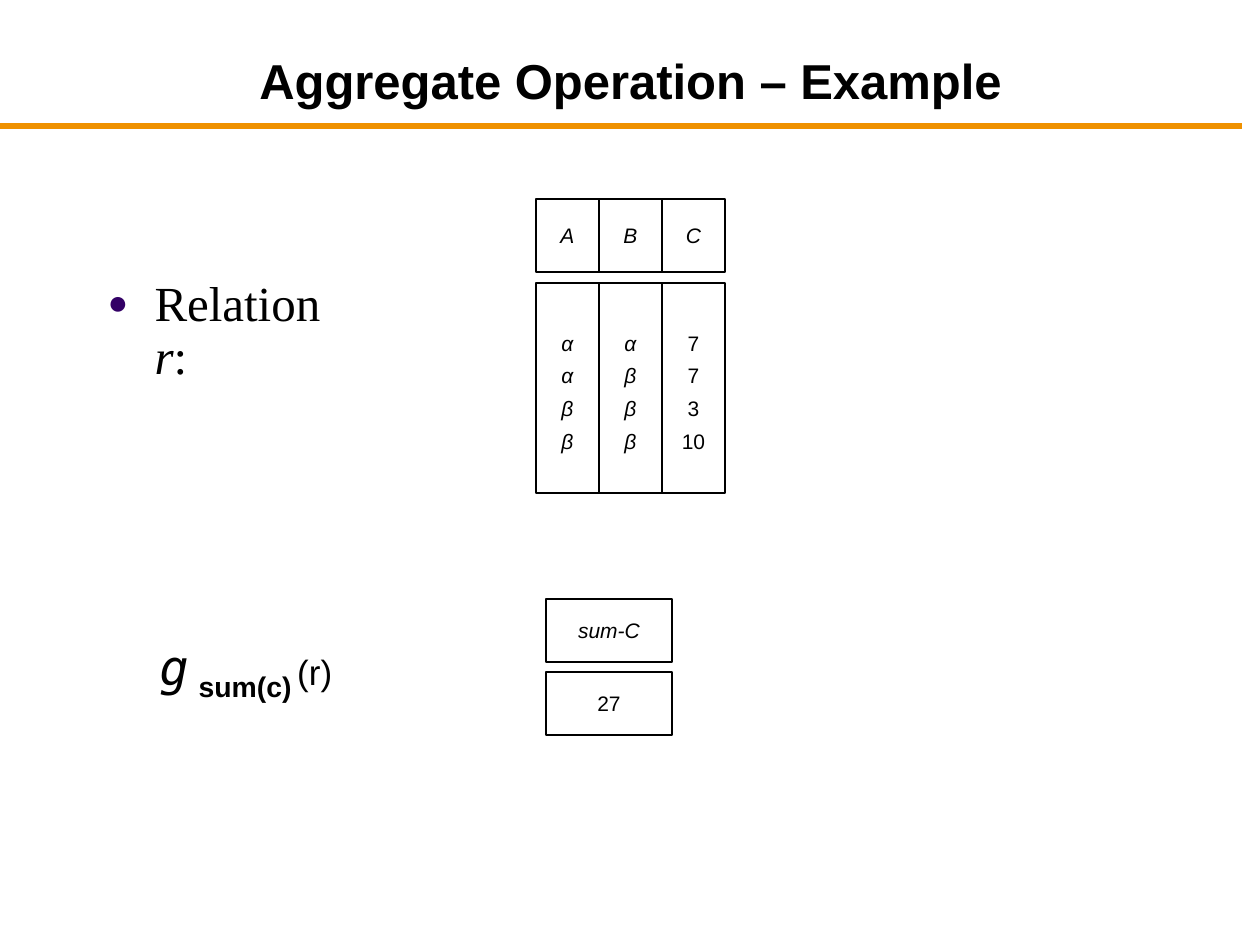
from lxml.etree import SubElement
from pptx import Presentation
from pptx.dml.color import RGBColor
from pptx.enum.shapes import MSO_CONNECTOR as Connector, MSO_SHAPE as Shape
from pptx.enum.text import MSO_ANCHOR as Anchor, MSO_AUTO_SIZE as AutoSize, PP_ALIGN as Align
from pptx.oxml.ns import qn
from pptx.util import Emu, Pt

TITLE = "Aggregate Operation – Example"
RELATION = [("Relation ", {}), ("r", {"italic": True}), (":", {})]
EXPRESSION = [
    ("g", {"size": 28, "font": "DejaVu Sans Mono", "italic": True}),
    (" ", {"size": 20, "bold": True}),
    ("sum(c)", {"size": 28, "bold": True, "baseline": -25000}),
    (" ", {"size": 20, "bold": True, "baseline": -25000}),
    ("(r)", {"size": 20}),
]
TABLES = [
    {"left": 536, "column": 63, "head": (199, 73), "body": (283, 210),
     "columns": [("A", ["α", "α", "β", "β"], True),
                 ("B", ["α", "β", "β", "β"], True),
                 ("C", ["7", "7", "3", "10"], False)]},
    {"left": 546, "column": 126, "head": (599, 63), "body": (672, 63),
     "columns": [("sum-C", ["27"], False)]},
]
BLACK, WHITE, ORANGE, PURPLE = "000000", "FFFFFF", "EF9100", "330066"


def px(n):
    return Emu(round(n * 914400 / 126))


def color(code):
    return RGBColor.from_string(code)


def place(part, left, top, width, height):
    part.left, part.top, part.width, part.height = map(px, (left, top, width, height))


def add_run(paragraph, text, size=12, font="Arial", bold=False, italic=False, baseline=None):
    run = paragraph.add_run()
    run.text = text
    run.font.size, run.font.name = Pt(size), font
    run.font.bold, run.font.italic = bold, italic
    run.font.color.rgb = color(BLACK)
    if baseline:
        run.font._element.set("baseline", str(baseline))


def hang(paragraph, indent):
    props = paragraph._p.get_or_add_pPr()
    props.set("marL", str(px(indent)))
    props.set("indent", str(-px(indent)))
    return props


def add_bullet(props):
    tint = SubElement(props, qn("a:buClr"))
    SubElement(tint, qn("a:srgbClr"), val=PURPLE)
    SubElement(props, qn("a:buSzPct"), val="70000")
    SubElement(props, qn("a:buFont"), typeface="Arial")
    SubElement(props, qn("a:buChar"), char="●")


def add_cell(slide, left, top, width, height, lines, italic, spacing):
    cell = slide.shapes.add_shape(Shape.RECTANGLE, *map(px, (left, top, width, height)))
    cell.shadow.inherit = False
    cell.fill.solid()
    cell.fill.fore_color.rgb = color(WHITE)
    cell.line.color.rgb = color(BLACK)
    cell.line.width = Pt(0.75)
    frame = cell.text_frame
    frame.word_wrap = False
    frame.vertical_anchor = Anchor.MIDDLE
    for i, line in enumerate(lines):
        paragraph = frame.add_paragraph() if i else frame.paragraphs[0]
        paragraph.alignment = Align.CENTER
        paragraph.line_spacing = spacing
        add_run(paragraph, line, italic=italic)


def main():
    deck = Presentation()
    deck.slide_width, deck.slide_height = px(1260), px(945)
    slide = deck.slides.add_slide(deck.slide_layouts[1])

    rule = slide.shapes.add_connector(Connector.STRAIGHT, 0, px(126), px(1242), px(126))
    rule.line.color.rgb = color(ORANGE)
    rule.line.width = Pt(3)
    SubElement(rule._element.spPr, qn("a:effectLst"))

    title = slide.shapes.title
    place(title, 95, 0, 1071, 116)
    title.text_frame.auto_size = AutoSize.NONE
    title.text_frame.vertical_anchor = Anchor.BOTTOM
    heading = title.text_frame.paragraphs[0]
    heading.alignment = Align.CENTER
    add_run(heading, TITLE, size=28, bold=True)

    relation = slide.placeholders[1]
    place(relation, 95, 273, 247, 67)
    relation.text_frame.auto_size = AutoSize.NONE
    item = relation.text_frame.paragraphs[0]
    item.line_spacing, item.space_before = 0.9, Pt(5.6)
    add_bullet(hang(item, 47))
    for text, style in RELATION:
        add_run(item, text, size=28, font="Times New Roman", **style)

    expression = slide.shapes.add_textbox(*map(px, (147, 630, 223, 77)))
    expression.text_frame.word_wrap = True
    formula = expression.text_frame.paragraphs[0]
    formula.space_before = Pt(9.8)
    hang(formula, 47)
    for text, style in EXPRESSION:
        add_run(formula, text, **style)

    for table in TABLES:
        width = table["column"]
        for i, (name, values, italic) in enumerate(table["columns"]):
            left = table["left"] + i * width
            for (top, height), lines, slanted, spacing in (
                (table["head"], [name], True, 1.0),
                (table["body"], values, italic, 1.3 if len(values) > 1 else 1.0),
            ):
                add_cell(slide, left, top, width, height, lines, slanted, spacing)

    deck.save("out.pptx")


if __name__ == "__main__":
    main()
